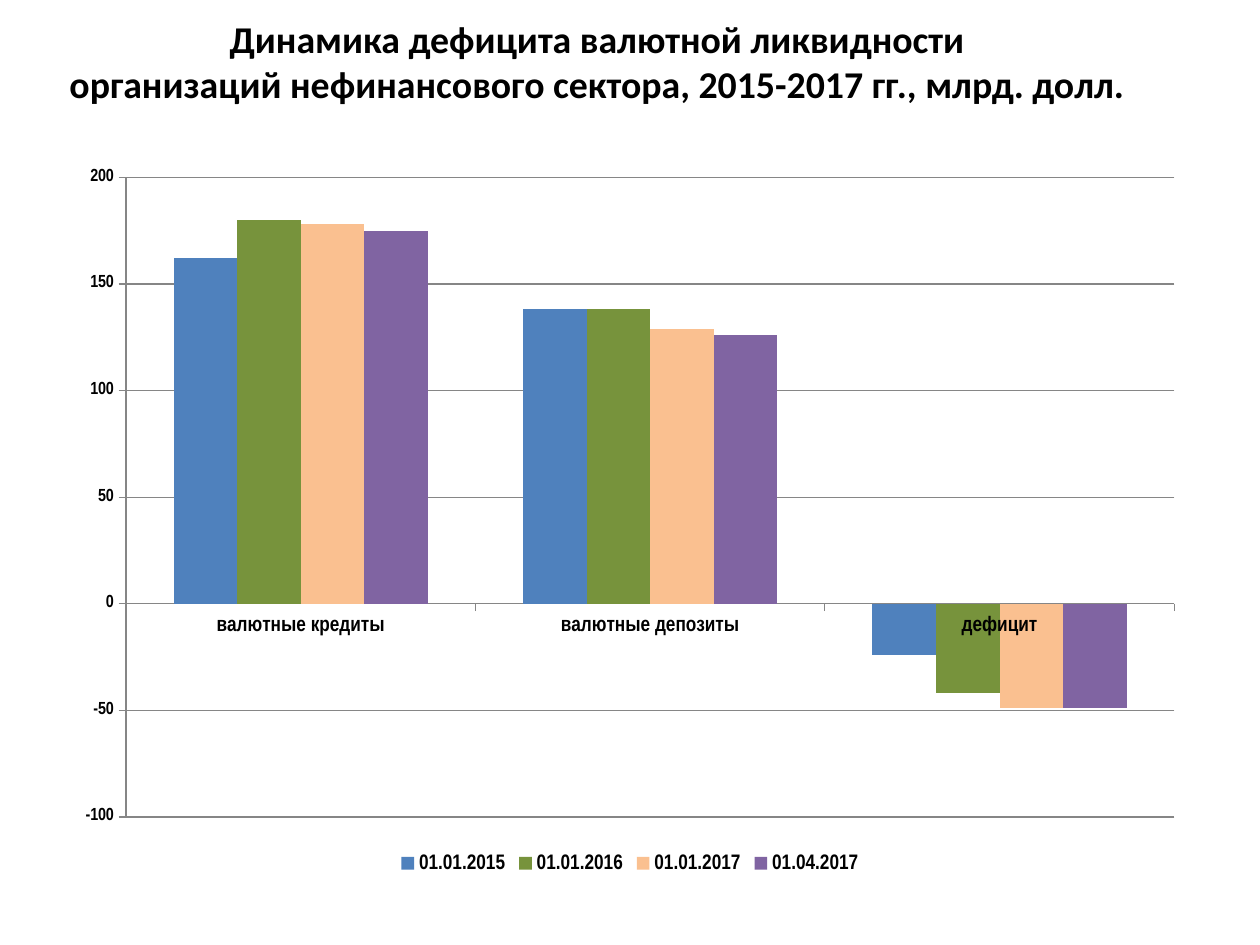
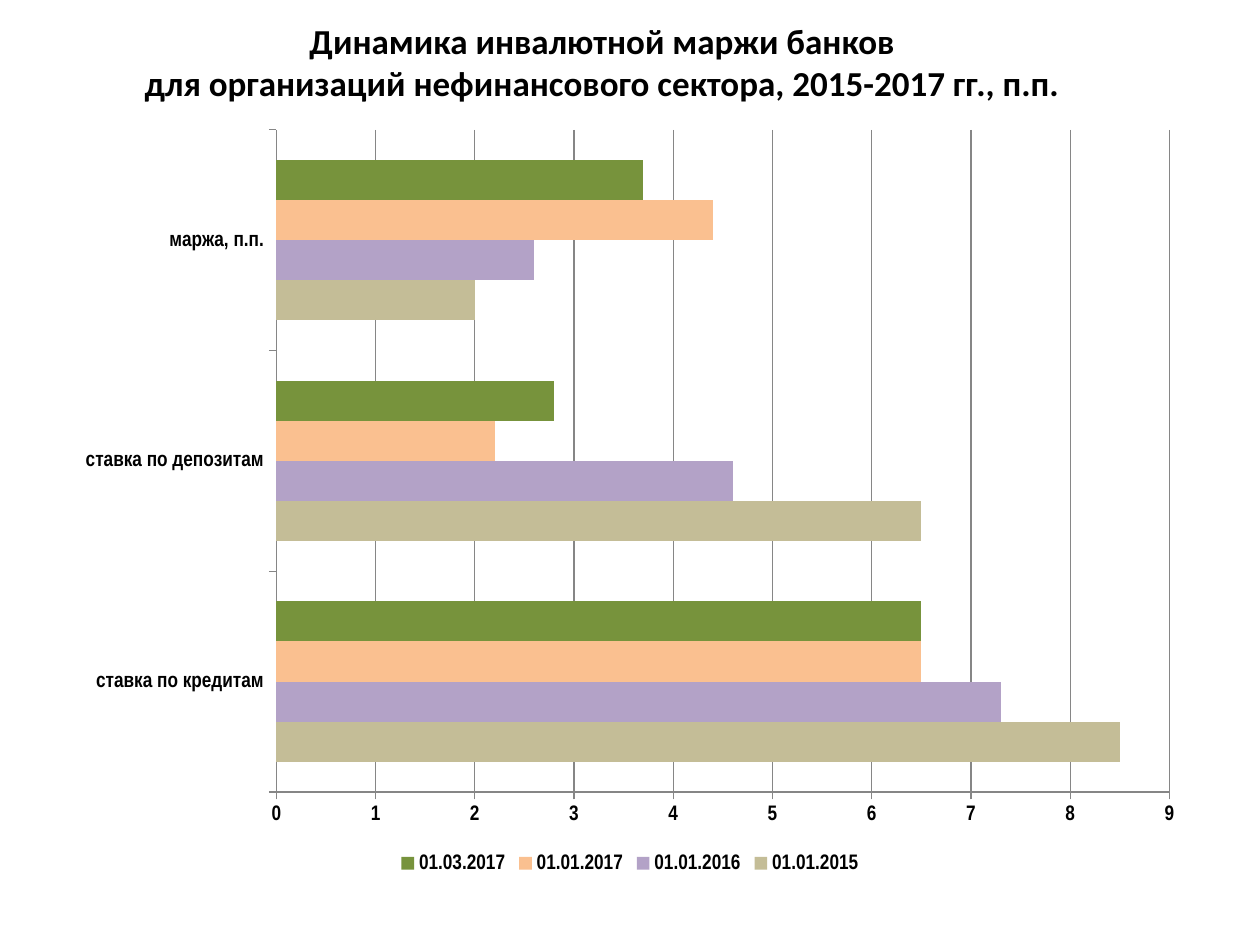
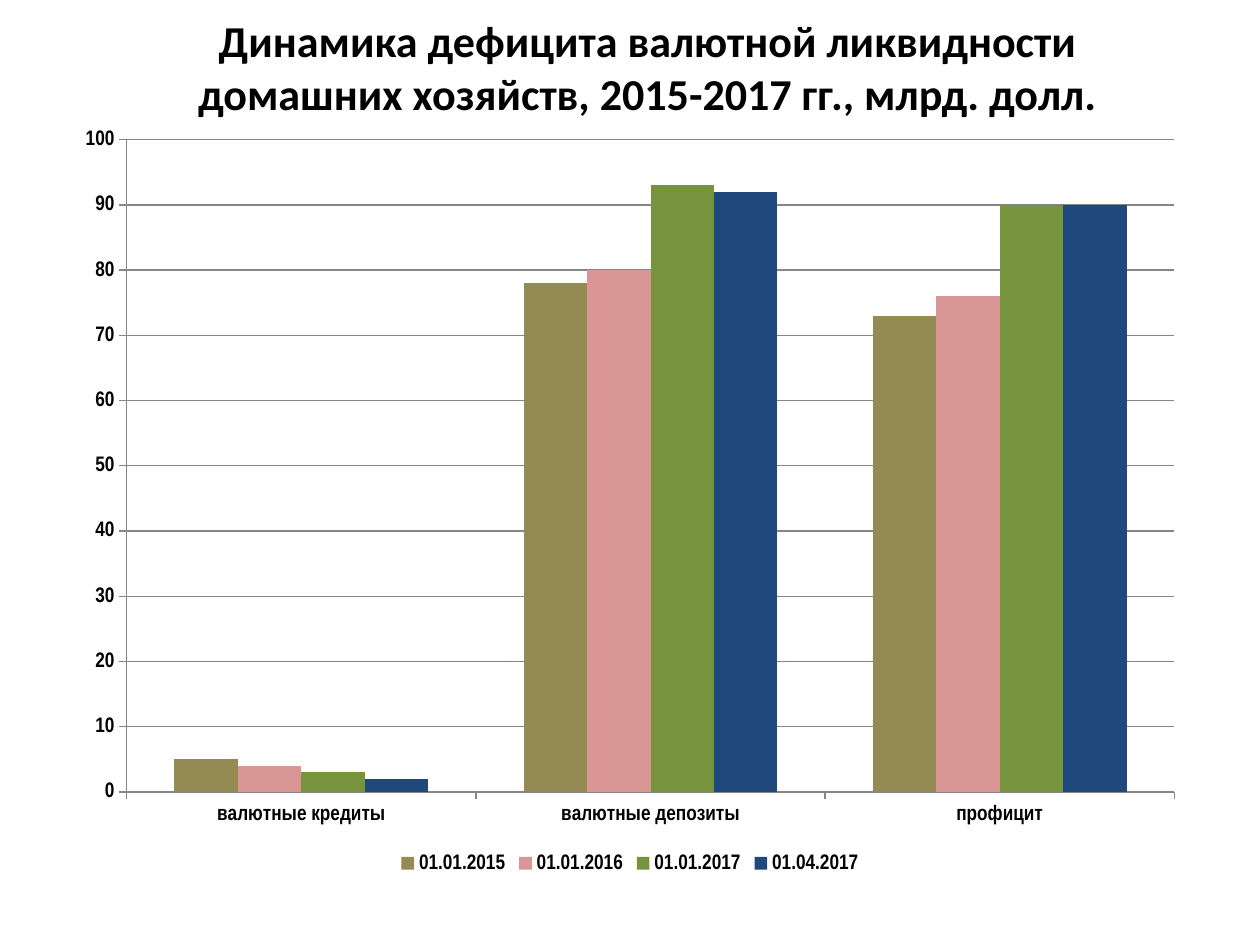
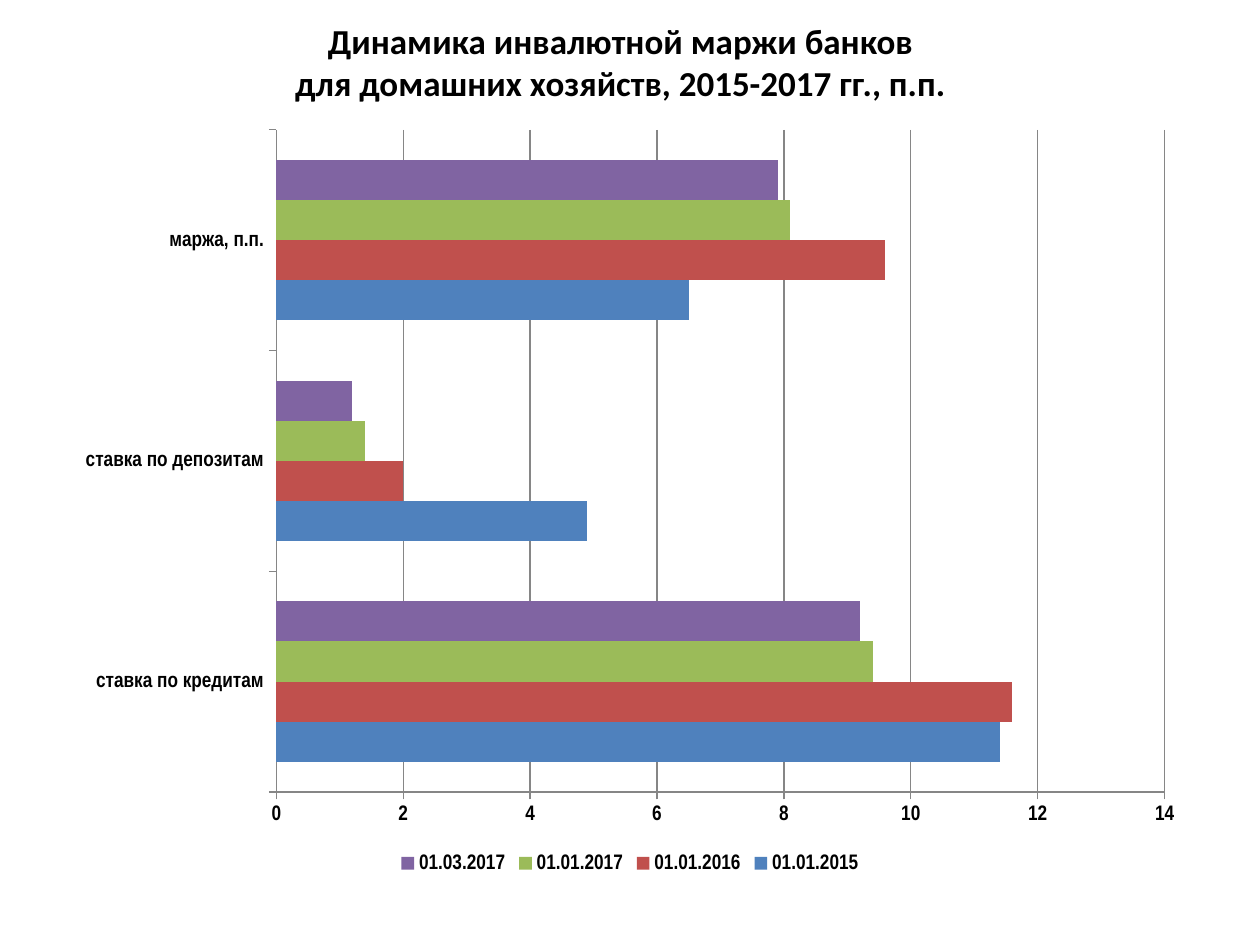
"""Builds four slides on foreign-currency liquidity and bank margins, each a title over a bar chart."""
from pptx import Presentation, util as u
from pptx.chart.data import CategoryChartData
from pptx.dml.color import RGBColor
from pptx.enum import chart as ch, text

COLORS = {
    "text": "000000", "grid": "868686", "blue": "4F81BD", "green": "77933C",
    "peach": "FAC090", "purple": "8064A2", "tan": "C4BD97", "lilac": "B3A2C7",
    "olive": "948A54", "pink": "D99694", "navy": "1F497D", "red": "C0504D",
    "lime": "9BBB59",
}
TITLE_FONT, LABEL_FONT = "Calibri", "Arial Narrow"
COLUMN, BAR = ch.XL_CHART_TYPE.COLUMN_CLUSTERED, ch.XL_CHART_TYPE.BAR_CLUSTERED
RATES = ["ставка по кредитам", "ставка по депозитам", "маржа, п.п."]
CHART_LEFT, CHART_WIDTH, CHART_BOTTOM = 0.5, 9, 6.97

SLIDES = [
    {
        "title": ["Динамика дефицита валютной ликвидности",
                  "организаций нефинансового сектора, 2015-2017 гг., млрд. долл."],
        "title_box": (0.24, 0.13, 9, 0.71), "title_size": 21.6,
        "kind": COLUMN, "top": 1.23, "scale": (-100, 200, 50), "value_size": 10,
        "cats": ["валютные кредиты", "валютные депозиты", "дефицит"],
        "series": [("01.01.2015", "blue", (162, 138, -24)),
                   ("01.01.2016", "green", (180, 138, -42)),
                   ("01.01.2017", "peach", (178, 129, -49)),
                   ("01.04.2017", "purple", (175, 126, -49))],
    },
    {
        "title": ["Динамика инвалютной маржи банков",
                  "для организаций нефинансового сектора, 2015-2017 гг., п.п."],
        "title_box": (0.28, 0.13, 9, 0.71), "title_size": 20,
        "kind": BAR, "top": 0.91, "scale": (0, 9, 1), "value_size": 12,
        "cats": RATES,
        "series": [("01.01.2015", "tan", (8.5, 6.5, 2)),
                   ("01.01.2016", "lilac", (7.3, 4.6, 2.6)),
                   ("01.01.2017", "peach", (6.5, 2.2, 4.4)),
                   ("01.03.2017", "green", (6.5, 2.8, 3.7))],
    },
    {
        "title": ["Динамика дефицита валютной ликвидности",
                  "домашних хозяйств, 2015-2017 гг., млрд. долл."],
        "title_box": (0.28, 0.13, 9.72, 0.79), "title_size": 25.2,
        "kind": COLUMN, "top": 0.91, "scale": (0, 100, 10), "value_size": 12,
        "cats": ["валютные кредиты", "валютные депозиты", "профицит"],
        "series": [("01.01.2015", "olive", (5, 78, 73)),
                   ("01.01.2016", "pink", (4, 80, 76)),
                   ("01.01.2017", "green", (3, 93, 90)),
                   ("01.04.2017", "navy", (2, 92, 90))],
    },
    {
        "title": ["Динамика инвалютной маржи банков",
                  "для домашних хозяйств, 2015-2017 гг., п.п."],
        "title_box": (0.2, 0.13, 9.45, 0.71), "title_size": 20,
        "kind": BAR, "top": 0.91, "scale": (0, 14, 2), "value_size": 12,
        "cats": RATES,
        "series": [("01.01.2015", "blue", (11.4, 4.9, 6.5)),
                   ("01.01.2016", "red", (11.6, 2, 9.6)),
                   ("01.01.2017", "lime", (9.4, 1.4, 8.1)),
                   ("01.03.2017", "purple", (9.2, 1.2, 7.9))],
    },
]


def rgb(name):
    return RGBColor.from_string(COLORS[name])


def set_font(font, name, size, bold):
    font.name, font.size, font.bold = name, u.Pt(size), bold
    font.color.rgb = rgb("text")


def set_line(line):
    line.color.rgb = rgb("grid")
    line.width = u.Pt(0.75)


def add_title(s, lines, box, size):
    tf = s.shapes.add_textbox(*map(u.Inches, box)).text_frame
    tf.word_wrap = True
    tf.vertical_anchor = text.MSO_ANCHOR.MIDDLE
    p = tf.paragraphs[0]
    p.text = "\v".join(lines)
    p.alignment = text.PP_ALIGN.CENTER
    set_font(p.font, TITLE_FONT, size, True)


def style_axis(axis, size):
    axis.major_tick_mark = ch.XL_TICK_MARK.OUTSIDE
    axis.minor_tick_mark = ch.XL_TICK_MARK.NONE
    set_font(axis.tick_labels.font, LABEL_FONT, size, True)
    set_line(axis.format.line)


def add_bar_chart(s, item):
    data = CategoryChartData()
    data.categories = item["cats"]
    for name, _, values in item["series"]:
        data.add_series(name, values)
    box = (CHART_LEFT, item["top"], CHART_WIDTH, CHART_BOTTOM - item["top"])
    chart = s.shapes.add_chart(item["kind"], *map(u.Inches, box), data).chart
    set_font(chart.font, TITLE_FONT, 10, False)
    chart.has_title = False

    plot = chart.plots[0]
    plot.gap_width, plot.overlap, plot.vary_by_categories = 150, 0, False
    for series, (_, color, _) in zip(plot.series, item["series"]):
        series.invert_if_negative = False
        series.format.fill.solid()
        series.format.fill.fore_color.rgb = rgb(color)

    style_axis(chart.category_axis, 12)
    axis = chart.value_axis
    style_axis(axis, item["value_size"])
    axis.minimum_scale, axis.maximum_scale, axis.major_unit = item["scale"]
    axis.has_major_gridlines = True
    set_line(axis.major_gridlines.format.line)

    chart.has_legend = True
    chart.legend.position = ch.XL_LEGEND_POSITION.BOTTOM
    chart.legend.include_in_layout = False
    set_font(chart.legend.font, LABEL_FONT, 12, True)


def main():
    prs = Presentation()
    prs.slide_width, prs.slide_height = u.Inches(10), u.Inches(7.5)
    for item in SLIDES:
        s = prs.slides.add_slide(prs.slide_layouts[6])
        add_title(s, item["title"], item["title_box"], item["title_size"])
        add_bar_chart(s, item)
    prs.save("out.pptx")


if __name__ == "__main__":
    main()
